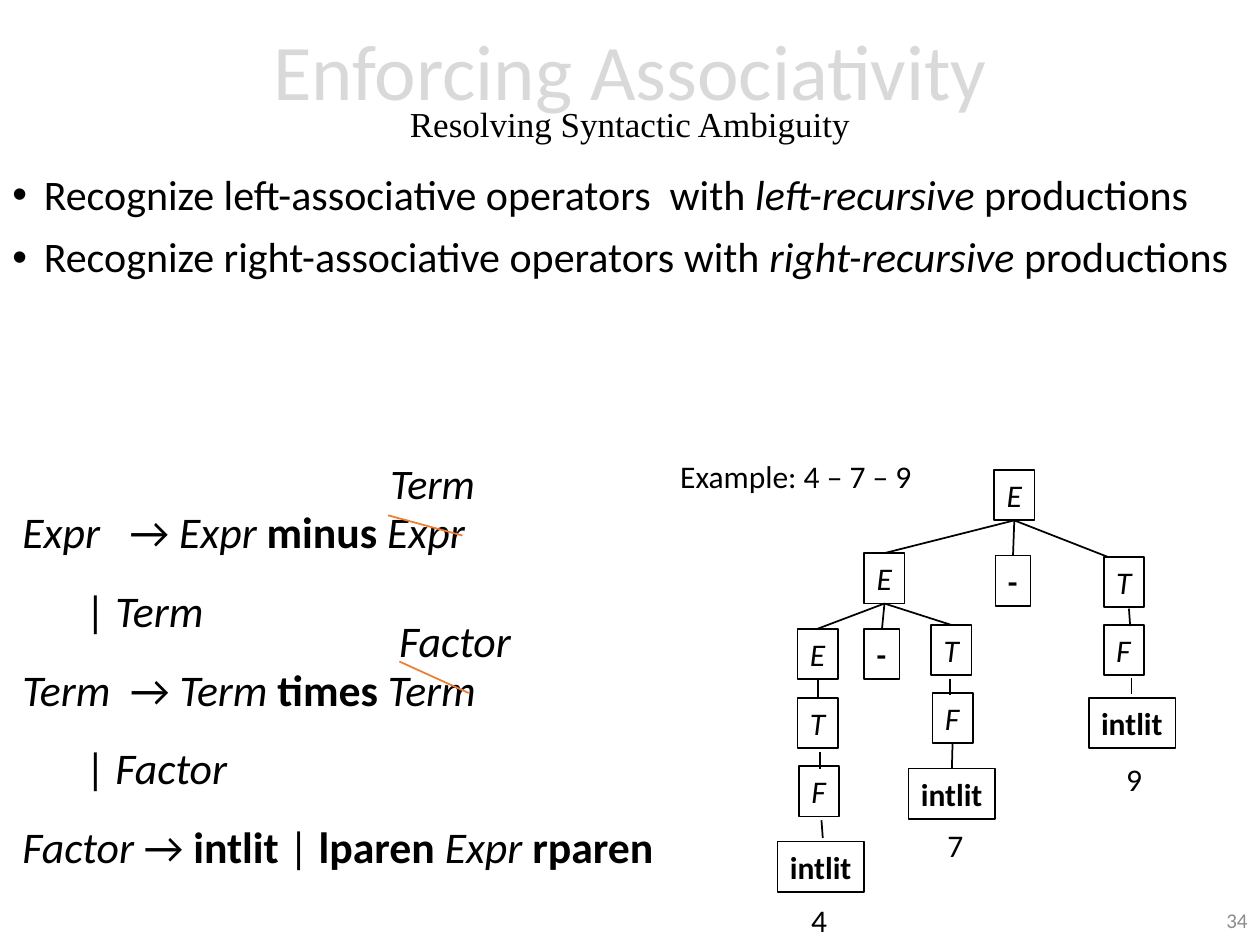
"""Build the slide on enforcing associativity with a parse tree."""
from typing import NamedTuple

from lxml.etree import SubElement
from pptx import Presentation
from pptx.dml.color import RGBColor
from pptx.enum.shapes import MSO_CONNECTOR, MSO_SHAPE
from pptx.enum.text import MSO_ANCHOR, MSO_AUTO_SIZE, PP_ALIGN
from pptx.oxml.ns import qn
from pptx.util import Inches, Pt

BLACK = RGBColor(0x00, 0x00, 0x00)
WHITE = RGBColor(0xFF, 0xFF, 0xFF)
PALE = RGBColor(0xD9, 0xD9, 0xD9)
GRAY = RGBColor(0x8C, 0x8C, 0x8C)
ORANGE = RGBColor(0xED, 0x7D, 0x31)
TOP, BOTTOM = 0, 2
HEIGHT = 0.4
WIDTHS = {"-": 0.28, "intlit": 0.69}


class Span(NamedTuple):
    text: str
    style: str = ""


class Node(NamedTuple):
    key: str
    text: str
    left: float
    top: float


class Line(NamedTuple):
    x1: float
    y1: float
    x2: float
    y2: float


class Label(NamedTuple):
    text: str
    left: float
    top: float
    width: float
    height: float = HEIGHT
    size: int = 18
    style: str = ""


POINTS = [
    [Span("Recognize left-associative operators  with "),
     Span("left-recursive", "i"), Span(" productions")],
    [Span("Recognize right-associative operators with "),
     Span("right-recursive", "i"), Span(" productions")],
]
RULES = [
    [Span("Expr   ", "i"), Span("→ "), Span("Expr", "i"),
     Span(" minus ", "b"), Span("Expr", "i")],
    [Span("| "), Span("Term", "i")],
    [Span("Term  ", "i"), Span("→ "), Span("Term ", "i"),
     Span("times ", "b"), Span("Term", "i")],
    [Span("| "), Span("Factor", "i")],
    [Span("Factor ", "i"), Span("→ "), Span("intlit ", "b"), Span("| "),
     Span("lparen ", "b"), Span("Expr ", "i"), Span("rparen", "b")],
]
LABELS = [
    Label("Term", 3, 3.58, 0.89, 0.5, 24, "i"),
    Label("Factor", 3.07, 4.82, 1.1, 0.52, 25, "i"),
    Label("Example: 4 – 7 – 9", 5.3, 3.58, 2.06),
    Label("4", 6.34, 7.1, 0.33),
    Label("7", 7.42, 6.51, 0.33),
    Label("9", 8.84, 5.98, 0.33),
]
NODES = [
    Node("root", "E", 7.89, 3.73),
    Node("left", "E", 6.86, 4.39),
    Node("minus", "-", 7.9, 4.41),
    Node("T9", "T", 8.76, 4.42),
    Node("F9", "F", 8.76, 4.96),
    Node("lit9", "intlit", 8.64, 5.54),
    Node("E4", "E", 6.33, 4.99),
    Node("minus2", "-", 6.86, 4.99),
    Node("T7", "T", 7.39, 4.96),
    Node("F7", "F", 7.4, 5.5),
    Node("lit7", "intlit", 7.21, 6.1),
    Node("T4", "T", 6.33, 5.54),
    Node("F4", "F", 6.34, 6.08),
    Node("lit4", "intlit", 6.17, 6.68),
]
LINKS = [
    ("root", "left"), ("root", "minus"), ("left", "E4"), ("left", "minus2"),
    ("left", "T7"), ("E4", "T4"), ("F7", "lit7"),
]
STEMS = [
    Line(8.96, 4.83, 8.97, 4.97), Line(8.98, 5.38, 8.98, 5.51),
    Line(7.54, 5.39, 7.54, 5.52), Line(6.51, 5.97, 6.51, 6.1),
    Line(6.52, 6.51, 6.53, 6.65),
]
STRIKES = [Line(3.08, 4.09, 3.67, 4.25), Line(3.17, 5.25, 3.72, 5.5)]


def paint(run, size: float, color=BLACK, style: str = "", face="Calibri"):
    font = run.font
    font.name, font.size, font.color.rgb = face, Pt(size), color
    font.bold, font.italic = "b" in style, "i" in style


def write(par, spans: list[Span], size: float):
    for span in spans:
        run = par.add_run()
        run.text = span.text
        paint(run, size, style=span.style)


def add_box(slide, left, top, width, height, wrap=True):
    box = slide.shapes.add_textbox(
        Inches(left), Inches(top), Inches(width), Inches(height))
    box.text_frame.word_wrap = wrap
    return box.text_frame


def add_pars(frame, rows: list[list[Span]], size: float, gap: float) -> list:
    pars = [frame.paragraphs[0]] + [frame.add_paragraph() for _ in rows[1:]]
    for par, row in zip(pars, rows):
        par.line_spacing = gap
        write(par, row, size)
    return pars


def add_label(slide, label: Label):
    frame = add_box(slide, *label[1:5], wrap=False)
    frame.text = label.text
    paint(frame.paragraphs[0].runs[0], label.size, style=label.style)


def add_node(slide, node: Node):
    width = WIDTHS.get(node.text, 0.32)
    shape = slide.shapes.add_shape(
        MSO_SHAPE.RECTANGLE, Inches(node.left), Inches(node.top),
        Inches(width), Inches(HEIGHT))
    shape.shadow.inherit = False
    shape.fill.solid()
    shape.fill.fore_color.rgb = WHITE
    shape.line.color.rgb, shape.line.width = BLACK, Pt(1)
    frame = shape.text_frame
    frame.word_wrap = False
    frame.text = node.text
    style = "i" if node.text in "ETF" else "b"
    paint(frame.paragraphs[0].runs[0], 18, style=style)
    return shape


def add_line(slide, line: Line, color=BLACK):
    wire = slide.shapes.add_connector(
        MSO_CONNECTOR.STRAIGHT, *(Inches(end) for end in line))
    wire.line.color.rgb, wire.line.width = color, Pt(1)
    SubElement(wire._element.spPr, qn("a:effectLst"))
    return wire


def add_title(slide):
    title = slide.shapes.title
    title.left, title.top = Inches(0), Inches(0.03)
    title.width, title.height = Inches(10), Inches(1.45)
    frame = title.text_frame
    frame.text = "Enforcing Associativity\nResolving Syntactic Ambiguity"
    frame.auto_size = MSO_AUTO_SIZE.NONE
    frame.vertical_anchor = MSO_ANCHOR.MIDDLE
    head, sub = frame.paragraphs
    for par in (head, sub):
        par.alignment, par.line_spacing = PP_ALIGN.CENTER, 0.7
    paint(head.runs[0], 45, PALE)
    paint(sub.runs[0], 20, face="Times New Roman")


def add_tree(slide):
    stray = add_line(slide, Line(8.05, 4.13, 8.92, 4.47))
    shapes = {node.key: add_node(slide, node) for node in NODES}
    stray.begin_connect(shapes["root"], BOTTOM)
    for start, end in LINKS:
        wire = add_line(slide, Line(0, 0, 1, 1))
        wire.begin_connect(shapes[start], BOTTOM)
        wire.end_connect(shapes[end], TOP)
    for stem in STEMS:
        add_line(slide, stem)


def main():
    deck = Presentation()
    deck.slide_width, deck.slide_height = Inches(10), Inches(7.5)
    slide = deck.slides.add_slide(deck.slide_layouts[5])
    add_title(slide)
    for par in add_pars(add_box(slide, 0, 1.33, 10, 4.95), POINTS, 24, 0.9):
        par.space_before = Pt(10)
        props = par._p.get_or_add_pPr()
        props.set("marL", str(Inches(0.25)))
        props.set("indent", str(Inches(-0.25)))
        SubElement(props, qn("a:buFont")).set("typeface", "Arial")
        SubElement(props, qn("a:buChar")).set("char", "•")
    rules = add_pars(add_box(slide, 0.08, 3.75, 6, 3.26), RULES, 25, 1.5)
    for par in rules[1::2]:
        par._p.get_or_add_pPr().set("marL", str(Inches(0.5)))
    for strike in STRIKES:
        add_line(slide, strike, ORANGE)
    add_tree(slide)
    for label in LABELS:
        add_label(slide, label)
    frame = add_box(slide, 7.75, 7.1, 2.25, 0.4)
    frame.text = "34"
    frame.vertical_anchor = MSO_ANCHOR.MIDDLE
    frame.paragraphs[0].alignment = PP_ALIGN.RIGHT
    paint(frame.paragraphs[0].runs[0], 12, GRAY)
    deck.save("out.pptx")


if __name__ == "__main__":
    main()
